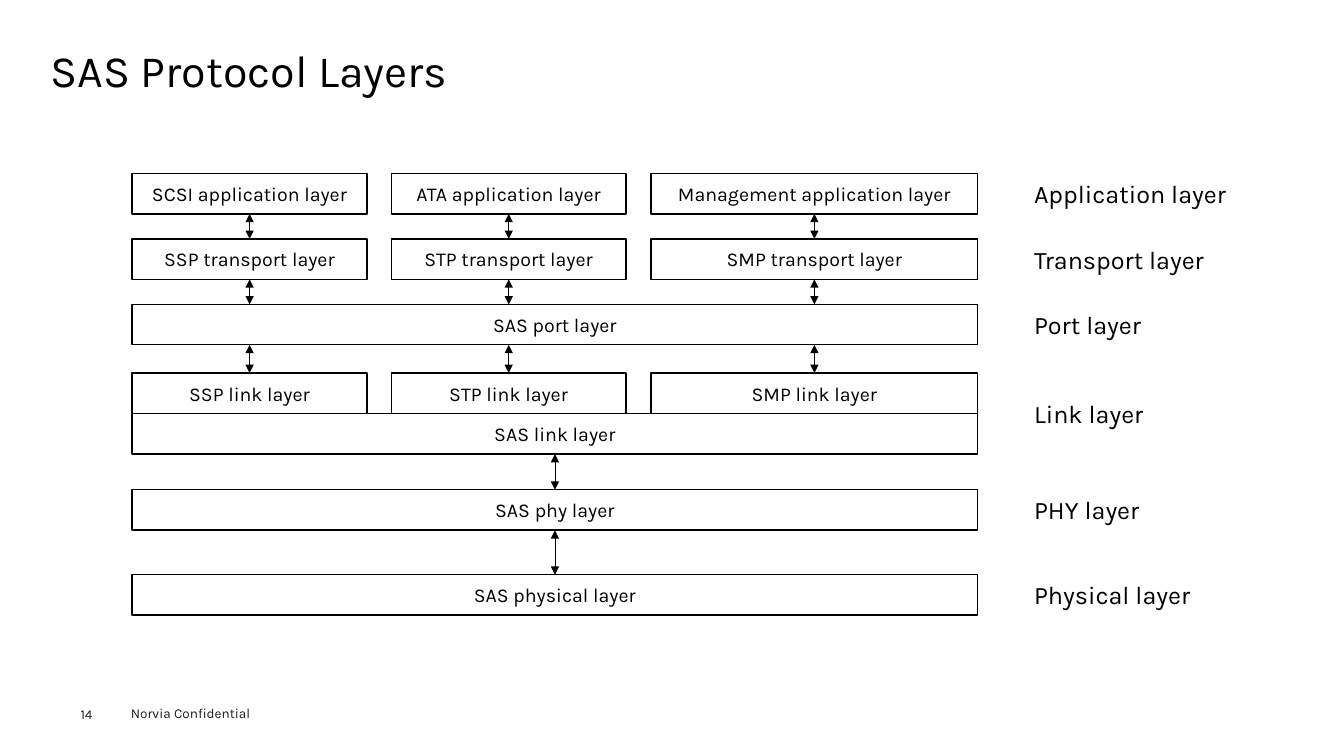
import lxml.etree
import pptx
import pptx.dml.color
import pptx.enum.shapes
import pptx.enum.text
import pptx.oxml.ns
import pptx.util
from pptx.util import Cm

COLOURS = {"ink": "000000", "footer": "1D1D1B"}
FONT = "Karla"
ROW_HEIGHT = 1.02

# Stack columns: offset from the left edge of the stack, width (cm)
COLUMNS = [(0, 5.92), (6.53, 5.92), (13.08, 8.23)]

# Stack rows: offset from the top of the stack, box texts (cm)
LAYERS = [
    (0, ["SCSI application layer", "ATA application layer", "Management application layer"]),
    (1.65, ["SSP transport layer", "STP transport layer", "SMP transport layer"]),
    (3.3, ["SAS port layer"]),
    (5.03, ["SSP link layer", "STP link layer", "SMP link layer"]),
    (6.05, ["SAS link layer"]),
    (7.97, ["SAS phy layer"]),
    (10.11, ["SAS physical layer"]),
]

# Layer names: offset from the top of the stack, text, width (cm)
LAYER_NAMES = [
    (0, "Application layer", 5.44),
    (1.65, "Transport layer", 4.95),
    (3.3, "Port layer", 3.35),
    (5.54, "Link layer", 3.35),
    (7.97, "PHY layer", 3.35),
    (10.11, "Physical layer", 4.45),
]


def rgb(name):
    return pptx.dml.color.RGBColor.from_string(COLOURS[name])


def write_text(shape, text, size, colour="ink", frame_format=None, paragraph_format=None):
    frame = shape.text_frame
    for name, value in {"word_wrap": True, **(frame_format or {})}.items():
        setattr(frame, name, value)
    paragraph = frame.paragraphs[0]
    paragraph.text = text
    for name, value in (paragraph_format or {}).items():
        setattr(paragraph, name, value)
    for name, value in {"name": FONT, "size": pptx.util.Pt(size)}.items():
        setattr(paragraph.font, name, value)
    paragraph.font.color.rgb = rgb(colour)


def add_text(slide, box, text, size, inset=True, **formats):
    shape = slide.shapes.add_textbox(*map(Cm, box))
    sides = ("margin_left", "margin_top", "margin_right", "margin_bottom")
    margins = {} if inset else dict.fromkeys(sides, 0)
    write_text(shape, text, size, frame_format=margins, **formats)


def add_layer_box(slide, box, text):
    shape = slide.shapes.add_shape(pptx.enum.shapes.MSO_SHAPE.RECTANGLE, *map(Cm, box))
    shape.shadow.inherit = False
    shape.fill.background()
    shape.line.color.rgb = rgb("ink")
    shape.line.width = pptx.util.Pt(1)
    write_text(shape, text, 14,
               frame_format={"vertical_anchor": pptx.enum.text.MSO_ANCHOR.MIDDLE},
               paragraph_format={"alignment": pptx.enum.text.PP_ALIGN.CENTER})


def add_double_arrow(slide, x, top, bottom):
    connector = slide.shapes.add_connector(
        pptx.enum.shapes.MSO_CONNECTOR.STRAIGHT, Cm(x), Cm(top), Cm(x), Cm(bottom))
    connector.line.color.rgb = rgb("ink")
    connector.line.width = pptx.util.Pt(0.5)
    properties = connector._element.spPr
    outline = properties.find(pptx.oxml.ns.qn("a:ln"))
    for tag in ("a:headEnd", "a:tailEnd"):
        lxml.etree.SubElement(outline, pptx.oxml.ns.qn(tag), type="triangle")
    lxml.etree.SubElement(properties, pptx.oxml.ns.qn("a:effectLst"))


def add_title(slide, box):
    add_text(slide, box, "SAS Protocol Layers", 32, inset=False,
             paragraph_format={"line_spacing": 0.9})


def add_protocol_stack(slide, left, top, width):
    # Boxes: one per column, or one across the whole stack
    for offset, texts in LAYERS:
        spans = COLUMNS if len(texts) > 1 else [(0, width)]
        for (column, span), text in zip(spans, texts):
            add_layer_box(slide, (left + column, top + offset, span, ROW_HEIGHT), text)

    # Arrows: in every gap, per column wherever either row is split
    for (upper, upper_texts), (lower, lower_texts) in zip(LAYERS, LAYERS[1:]):
        if lower - upper <= ROW_HEIGHT + 0.1:
            continue
        split = len(upper_texts) > 1 or len(lower_texts) > 1
        for column, span in COLUMNS if split else [(0, width)]:
            add_double_arrow(slide, left + column + span / 2,
                             top + upper + ROW_HEIGHT, top + lower)


def add_layer_names(slide, left, top):
    for offset, text, width in LAYER_NAMES:
        add_text(slide, (left, top + offset, width, ROW_HEIGHT), text, 18)


def add_footer(slide, left, top):
    add_text(slide, (left, top + 0.13, 1.4, 0.41), "14", 9.7, inset=False, colour="footer")
    add_text(slide, (left + 1.02, top, 4.06, 0.69), "Norvia Confidential", 9.7, colour="footer")


def main():
    presentation = pptx.Presentation()
    presentation.slide_width = Cm(33.87)
    presentation.slide_height = Cm(19.05)
    slide = presentation.slides.add_slide(presentation.slide_layouts[6])
    add_title(slide, (1.27, 1.24, 31.37, 1.37))
    add_protocol_stack(slide, 3.33, 4.37, 21.31)
    add_layer_names(slide, 25.81, 4.37)
    add_footer(slide, 2.03, 17.65)
    presentation.save("out.pptx")


if __name__ == "__main__":
    main()
